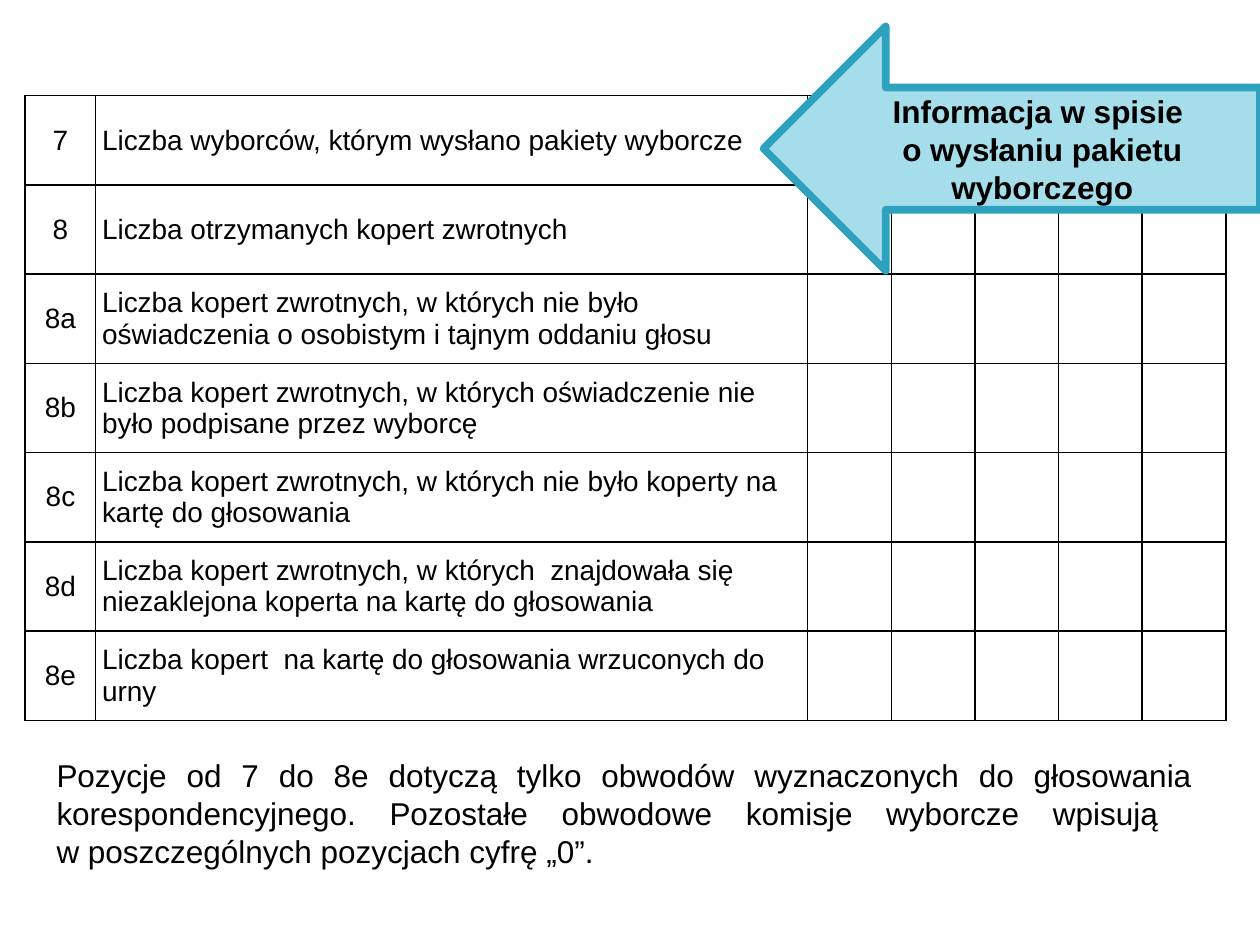
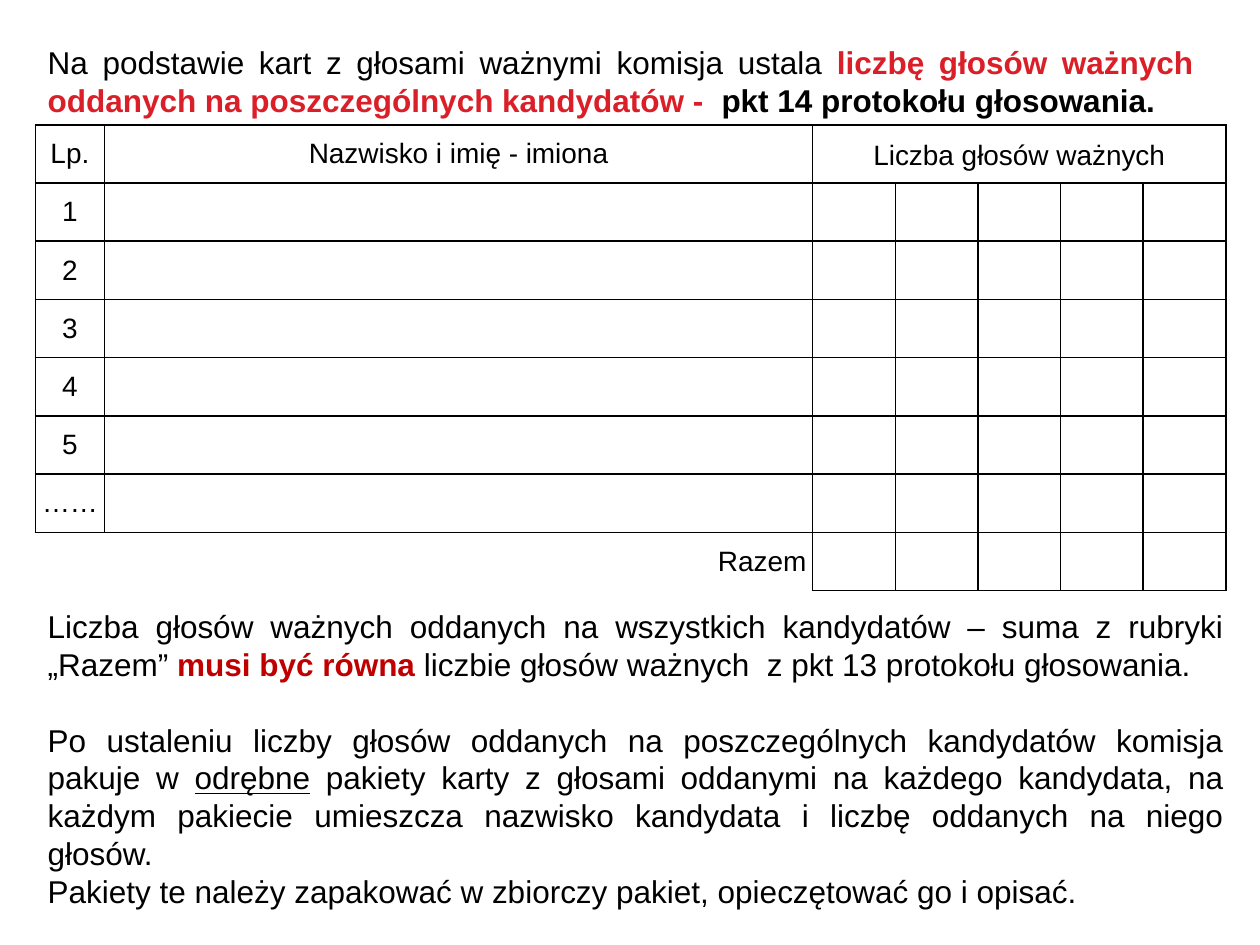
from lxml import etree
from pptx import Presentation
from pptx.dml.color import RGBColor
from pptx.enum.shapes import MSO_SHAPE
from pptx.enum.text import MSO_ANCHOR, PP_ALIGN
from pptx.oxml.ns import qn
from pptx.util import Pt

PX = 9144
FONT = "Arial"
BODY_SIZE, TABLE_SIZE = 18, 16
BLACK, RED, DARK_RED = "000000", "DA1F28", "C00000"
ARROW_FILL, ARROW_LINE = "A6DDEA", "2DA2BF"
LEFT, CENTER, RIGHT, JUSTIFY = PP_ALIGN.LEFT, PP_ALIGN.CENTER, PP_ALIGN.RIGHT, PP_ALIGN.JUSTIFY
MIDDLE = MSO_ANCHOR.MIDDLE
LEFT_ARROW = MSO_SHAPE.LEFT_ARROW
ALL_SIDES = "LRTB"
DIGIT_COLUMNS = 5
BLANK_LAYOUT = 6

ENVELOPE_ROWS = [
    ("7", "Liczba wyborców, którym wysłano pakiety wyborcze"),
    ("8", "Liczba otrzymanych kopert zwrotnych"),
    ("8a", "Liczba kopert zwrotnych, w których nie było oświadczenia o osobistym i tajnym oddaniu głosu"),
    ("8b", "Liczba kopert zwrotnych, w których oświadczenie nie było podpisane przez wyborcę"),
    ("8c", "Liczba kopert zwrotnych, w których nie było koperty na kartę do głosowania"),
    ("8d", "Liczba kopert zwrotnych, w których  znajdowała się niezaklejona koperta na kartę do głosowania"),
    ("8e", "Liczba kopert  na kartę do głosowania wrzuconych do urny"),
]
ARROW_TEXT = "Informacja w spisie \no wysłaniu pakietu wyborczego"
ENVELOPE_NOTE = [[(
    "Pozycje od 7 do 8e dotyczą tylko obwodów wyznaczonych do głosowania korespondencyjnego. "
    "Pozostałe obwodowe komisje wyborcze wpisują \nw poszczególnych pozycjach cyfrę „0”. ", {})]]

CANDIDATE_ROWS = [("Lp.", "Nazwisko i imię - imiona")]
CANDIDATE_ROWS += [(label, "") for label in ("1", "2", "3", "4", "5", "……")]
CANDIDATE_ROWS += [("", "Razem")]
CANDIDATE_INTRO = [[
    ("Na podstawie kart z głosami ważnymi komisja ustala ", {}),
    ("liczbę głosów ważnych oddanych na poszczególnych kandydatów -  ", {"colour": RED, "bold": True}),
    ("pkt 14 protokołu głosowania.", {"bold": True}),
]]
SUM_RULE = [
    ("Liczba głosów ważnych oddanych na wszystkich kandydatów – suma z rubryki „Razem” ", {}),
    ("musi być równa ", {"colour": DARK_RED, "bold": True}),
    ("liczbie głosów ważnych  z pkt 13 protokołu głosowania.", {}),
]
PACKING_RULE = [
    ("Po ustaleniu liczby głosów oddanych na poszczególnych kandydatów komisja pakuje w ", {}),
    ("odrębne", {"underline": True}),
    (" pakiety karty z głosami oddanymi na każdego kandydata, na każdym pakiecie umieszcza "
     "nazwisko kandydata i liczbę oddanych na niego głosów.", {}),
]
SEALING_RULE = [("Pakiety te należy zapakować w zbiorczy pakiet, opieczętować go i opisać.", {})]


def rgb(colour):
    """Turn a hex string into a colour."""
    return RGBColor.from_string(colour)


def scaled(box):
    """Turn a box in px into EMU."""
    return [round(length * PX) for length in box]


def write_spans(para, spans, size, align):
    """Write styled spans into a paragraph, breaking lines at newlines."""
    para.alignment = align
    para.font.name = FONT
    para.font.size = Pt(size)
    for text, style in spans:
        for index, line in enumerate(text.split("\n")):
            if index:
                para.add_line_break()
            span = para.add_run()
            span.text = line
            span.font.color.rgb = rgb(style.get("colour", BLACK))
            span.font.bold = style.get("bold")
            span.font.underline = style.get("underline")


def add_text(page, box, paragraphs, gaps=()):
    """Add justified body text; gaps maps a paragraph's index to its space before."""
    frame = page.shapes.add_textbox(*scaled(box)).text_frame
    frame.word_wrap = True
    for index, spans in enumerate(paragraphs):
        para = frame.add_paragraph() if index else frame.paragraphs[0]
        write_spans(para, spans, BODY_SIZE, JUSTIFY)
        if index in gaps:
            para.space_before = Pt(gaps[index])


def add_arrow(page, box, text):
    """Add a left arrow with a bold centred caption."""
    arrow = page.shapes.add_shape(LEFT_ARROW, *scaled(box))
    arrow.shadow.inherit = False
    arrow.fill.solid()
    arrow.fill.fore_color.rgb = rgb(ARROW_FILL)
    arrow.line.color.rgb = rgb(ARROW_LINE)
    arrow.line.width = Pt(4.33)
    arrow.text_frame.word_wrap = True
    arrow.text_frame.vertical_anchor = MIDDLE
    write_spans(arrow.text_frame.paragraphs[0], [(text, {"bold": True})], BODY_SIZE, CENTER)


def format_cell(cell, sides=ALL_SIDES):
    """Give a cell its margins, no fill, and black borders on the given sides."""
    cell.margin_left = cell.margin_right = 5 * PX
    cell.margin_top = cell.margin_bottom = 0
    cell.vertical_anchor = MIDDLE
    properties = cell._tc.get_or_add_tcPr()
    for side in ALL_SIDES:
        border = etree.SubElement(properties, qn(f"a:ln{side}"), w=str(Pt(1)))
        if side in sides:
            fill = etree.SubElement(border, qn("a:solidFill"))
            etree.SubElement(fill, qn("a:srgbClr"), val=BLACK)
        else:
            etree.SubElement(border, qn("a:noFill"))
    cell.fill.background()


def write_cell(cell, text, align):
    """Write plain table text into a cell."""
    write_spans(cell.text_frame.paragraphs[0], [(text, {})], TABLE_SIZE, align)


def add_form_table(page, box, rows, label_width, name_width, name_aligns, open_sides):
    """Add a protocol table: label, description and equal columns for digits."""
    width, height = box[2:]
    table = page.shapes.add_table(len(rows), 2 + DIGIT_COLUMNS, *scaled(box)).table
    table.first_row = table.horz_banding = False
    digit_width = (width - label_width - name_width) / DIGIT_COLUMNS
    widths = [label_width, name_width] + [digit_width] * DIGIT_COLUMNS
    for column, column_width in zip(table.columns, widths):
        column.width = round(column_width * PX)
    for index, (label, name) in enumerate(rows):
        table.rows[index].height = round(height / len(rows) * PX)
        for column in range(len(widths)):
            format_cell(table.cell(index, column), open_sides.get((index, column), ALL_SIDES))
        if label:
            write_cell(table.cell(index, 0), label, CENTER)
        if name:
            write_cell(table.cell(index, 1), name, name_aligns.get(index, LEFT))
    return table


def build_envelopes(page):
    """Build the slide on postal voting envelopes."""
    add_form_table(page, (20, 76, 953, 496), ENVELOPE_ROWS, 56, 565, {}, {})
    add_arrow(page, (606, 21, 394, 194), ARROW_TEXT)
    add_text(page, (35, 595, 921, 101), ENVELOPE_NOTE)


def build_candidates(page):
    """Build the slide on votes for each candidate."""
    add_text(page, (28, 29, 929, 71), CANDIDATE_INTRO)
    total = len(CANDIDATE_ROWS) - 1
    table = add_form_table(page, (28, 99, 945, 370), CANDIDATE_ROWS, 55, 562,
                           {0: CENTER, total: RIGHT}, {(total, 0): "T", (total, 1): "TR"})
    votes = table.cell(0, 2)
    votes.merge(table.cell(0, 1 + DIGIT_COLUMNS))
    write_cell(votes, "Liczba głosów ważnych", CENTER)
    votes.text_frame.paragraphs[0].line_spacing = 1.15
    add_text(page, (28, 477, 953, 252), [SUM_RULE, PACKING_RULE, SEALING_RULE], {1: 21.6})


def main():
    """Build and save the deck."""
    deck = Presentation()
    deck.slide_width, deck.slide_height = scaled((1000, 750))
    for build in (build_envelopes, build_candidates):
        build(deck.slides.add_slide(deck.slide_layouts[BLANK_LAYOUT]))
    deck.save("out.pptx")


if __name__ == "__main__":
    main()
